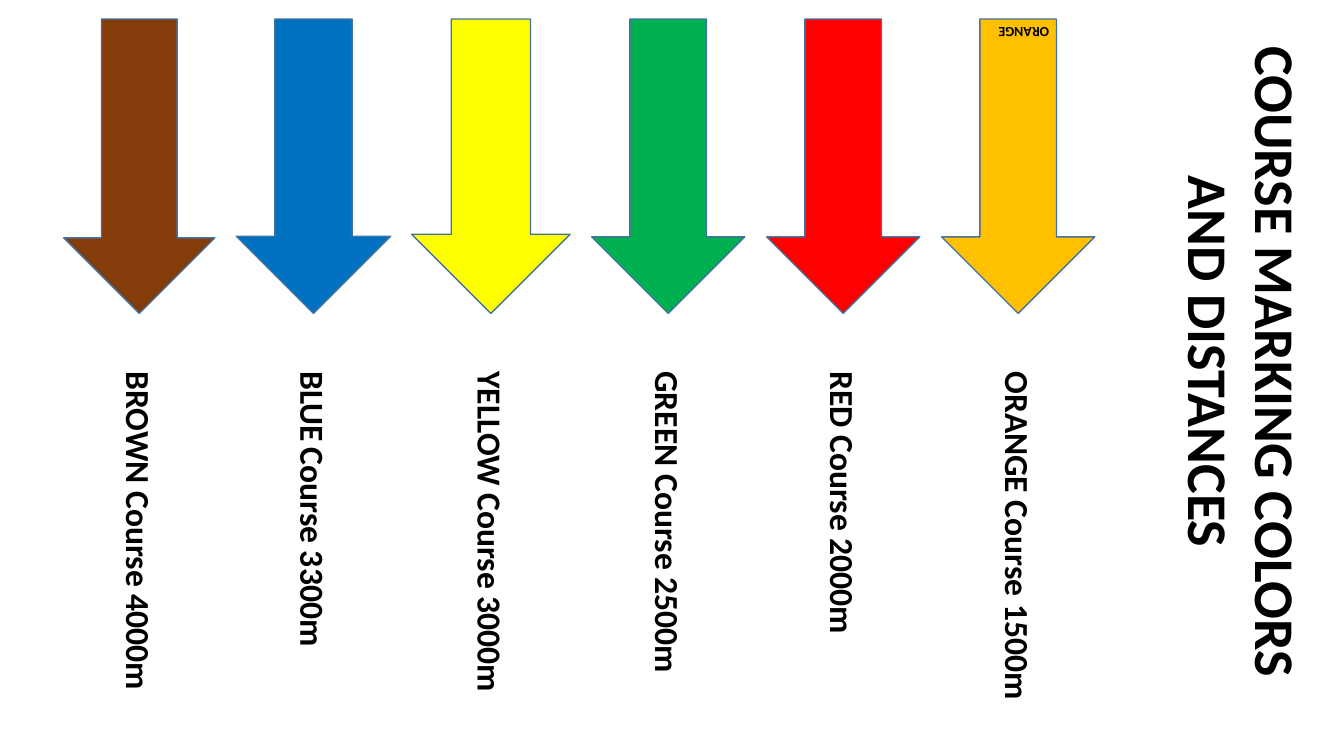
from dataclasses import dataclass

from pptx import Presentation
from pptx.dml.color import RGBColor
from pptx.enum.shapes import MSO_SHAPE
from pptx.enum.text import MSO_ANCHOR, MSO_AUTO_SIZE, PP_ALIGN
from pptx.util import Cm, Pt

RIGHT_ARROW = MSO_SHAPE.RIGHT_ARROW
TOP = MSO_ANCHOR.TOP
NO_AUTOFIT = MSO_AUTO_SIZE.NONE
LEFT, CENTER = PP_ALIGN.LEFT, PP_ALIGN.CENTER


@dataclass(frozen=True)
class Theme:
    font: str = "Calibri"
    text: RGBColor = RGBColor(0x00, 0x00, 0x00)
    outline: RGBColor = RGBColor(0x43, 0x73, 0x9E)
    title_size: Pt = Pt(40)
    course_size: Pt = Pt(24)
    gap_size: Pt = Pt(18)
    tag_size: Pt = Pt(10)


theme = Theme()


def place(shape, center_x, center_y, length, thickness, rotation):
    """Set the size of a shape and turn it about its centre."""
    shape.width, shape.height = Cm(length), Cm(thickness)
    shape.left = Cm(center_x - length / 2)
    shape.top = Cm(center_y - thickness / 2)
    shape.rotation = rotation


def write(shape, parts, size, alignment=LEFT):
    """Fill a shape with one bold paragraph made of the given parts."""
    frame = shape.text_frame
    frame.word_wrap = True
    frame.auto_size = NO_AUTOFIT
    frame.vertical_anchor = TOP
    paragraph = frame.paragraphs[0]
    paragraph.alignment = alignment
    paragraph.font.name = theme.font
    paragraph.font.size = size
    paragraph.font.bold = True
    paragraph.font.color.rgb = theme.text
    for part in parts:
        run = paragraph.add_run()
        run.text = part
        if part == " ":
            run.font.size = theme.gap_size
    return paragraph


presentation = Presentation()
presentation.slide_width, presentation.slide_height = Cm(33.87), Cm(19.05)
slide = presentation.slides.add_slide(presentation.slide_layouts[5])

# Title, reading downwards at the right edge
title = slide.shapes.title
place(title, 31.33, 9.11, 17.65, 3.68, 90)
write(title, ["COURSE MARKING COLORS AND DISTANCES"], theme.title_size, CENTER)

# Courses: label parts, colour, column centre, arrow thickness, label length
courses = [
    (["ORANGE Course 1500m"], "FFC000", 25.66, 3.86, 9.63),
    (["RED Course 2000m"], "FF0000", 21.25, 3.86, 9.02),
    (["GREEN Course 2500m"], "00B050", 16.84, 3.86, 9.35),
    (["YELLOW Course 3000m"], "FFFF00", 12.37, 3.99, 9.35),
    (["BLUE", " ", "Course 3300m"], "0070C0", 7.9, 3.89, 9.35),
    (["BROWN Course 4000m"], "843C0B", 3.51, 3.81, 9.63),
]
arrow_center_y, arrow_length = 4.19, 7.42
label_top, label_thickness = 9.11, 1.28

for parts, color, center_x, thickness, label_length in courses:
    # Arrow in the marking colour
    arrow = slide.shapes.add_shape(RIGHT_ARROW, 0, 0, 0, 0)
    place(arrow, center_x, arrow_center_y, arrow_length, thickness, 90)
    arrow.shadow.inherit = False
    arrow.fill.solid()
    arrow.fill.fore_color.rgb = RGBColor.from_string(color)
    arrow.line.color.rgb = theme.outline
    arrow.line.width = Pt(1)

    # Course name and distance below it
    label = slide.shapes.add_textbox(0, 0, 0, 0)
    place(label, center_x, label_top + label_length / 2,
          label_length, label_thickness, 90)
    write(label, parts, theme.course_size)

# Upside-down tag on the orange arrow
tag = slide.shapes.add_textbox(0, 0, 0, 0)
place(tag, 25.65, 0.8, 2.08, 0.64, 180)
write(tag, ["ORANGE"], theme.tag_size).line_spacing = 0.9

presentation.save("out.pptx")
